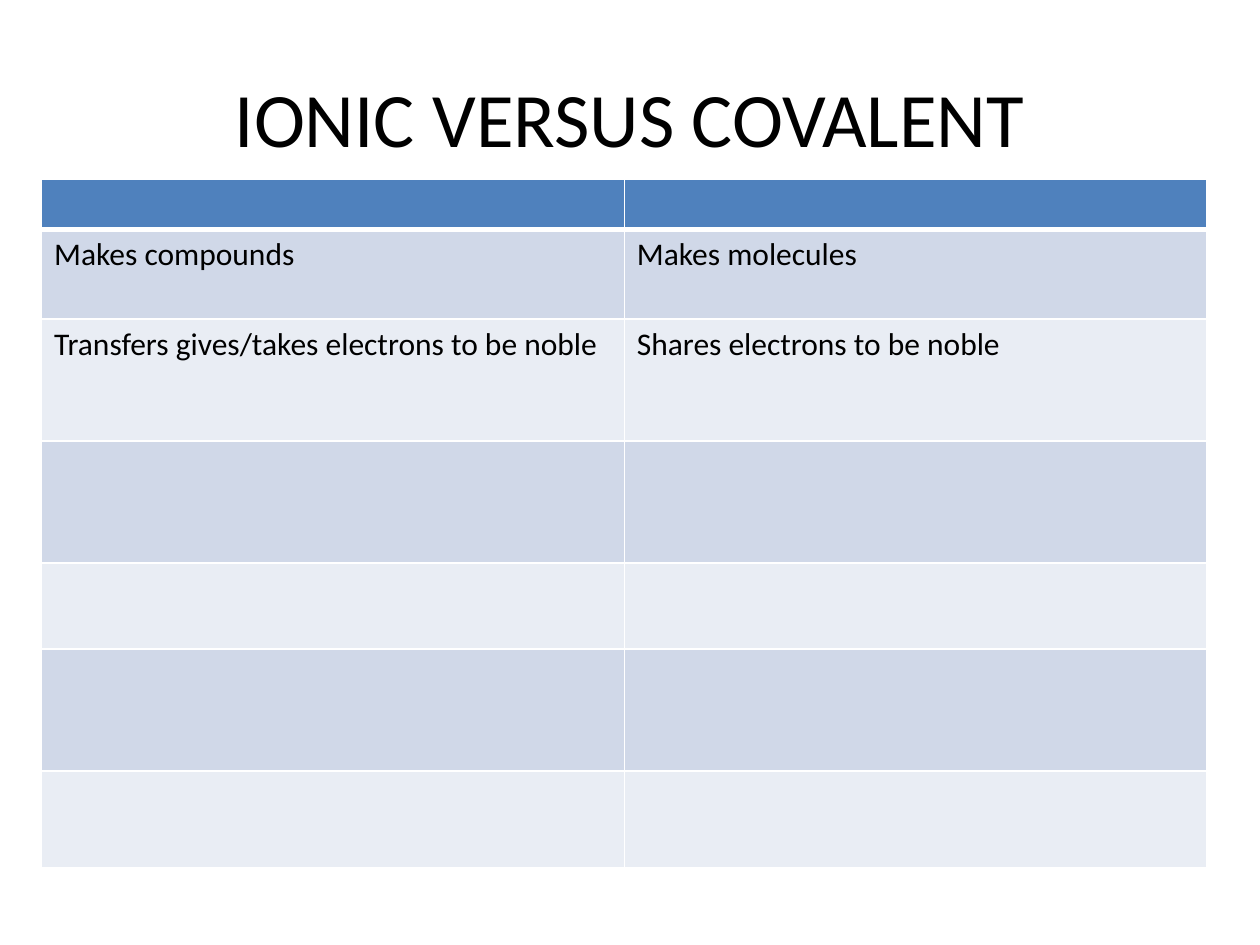
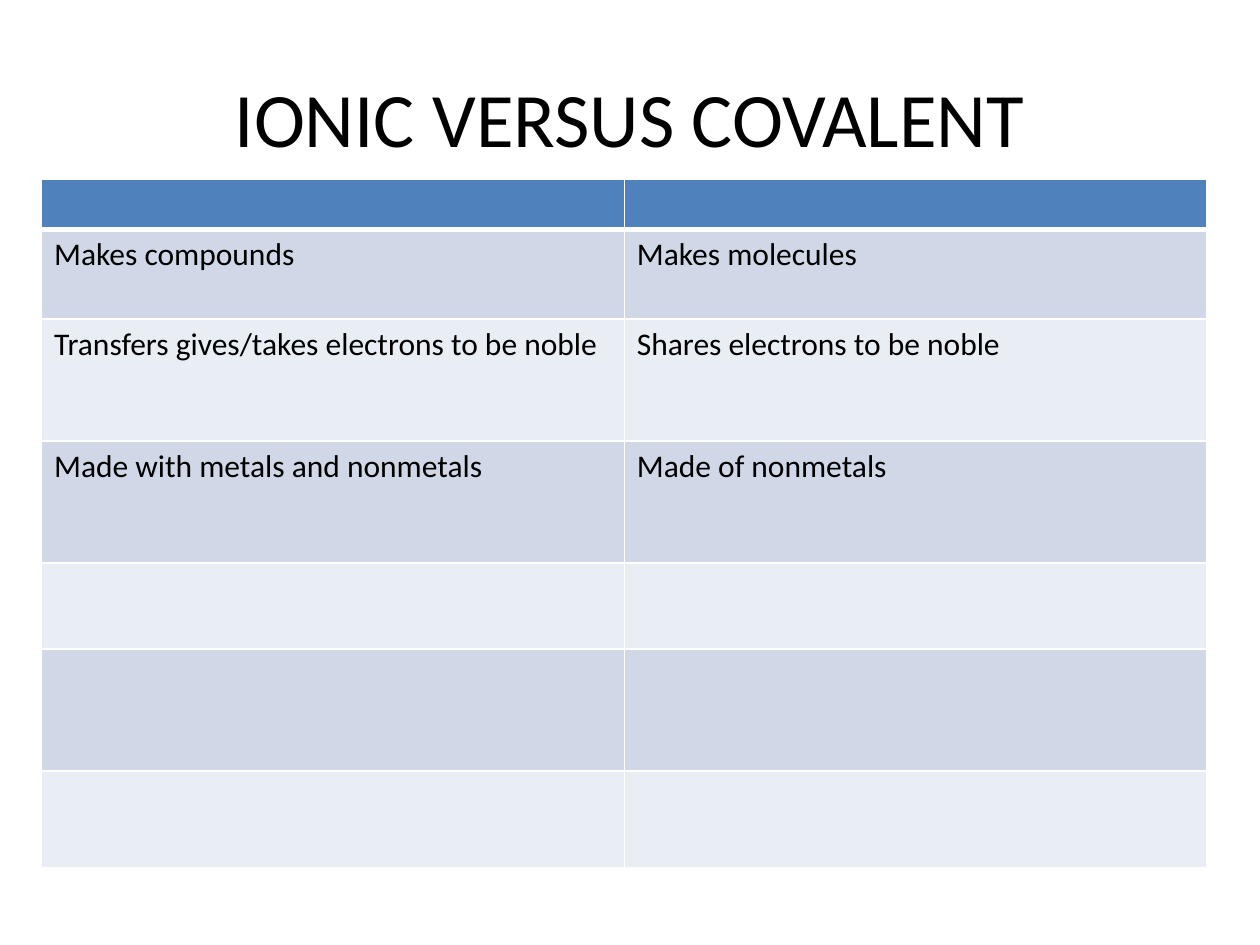
from dataclasses import dataclass
from lxml.etree import SubElement as Sub
from pptx import Presentation
from pptx.dml.color import RGBColor as RGB
from pptx.enum.text import MSO_ANCHOR as Anchor, PP_ALIGN as Align
from pptx.oxml.ns import qn
from pptx.util import Inches, Pt

# Content
TITLE = "IONIC VERSUS COVALENT"
FACTS = [
    ("Makes compounds", "Makes molecules"),
    ("Transfers gives/takes electrons to be noble", "Shares electrons to be noble"),
    ("Made with metals and nonmetals", "Made of nonmetals"),
]
SHOWN = [2, 3]  # facts revealed on each slide

# Layout in inches
WIDE, HIGH = 10, 7.5
HEAD = (0.05 * WIDE, 0.04 * HIGH, 0.9 * WIDE, HIGH / 6)
LEFT, TOP, SPAN, COLS = 0.33, 1.42, 9.25, 2
ROWS = [0.39, 0.71, 0.97, 0.97, 0.68, 0.97, 0.77]


@dataclass(frozen=True)
class Theme:
    font: str = "Calibri"
    ink: str = "000000"
    rule: str = "FFFFFF"
    head: str = "4F81BD"
    bands: tuple = ("D0D8E8", "E9EDF4")
    title: int = 44
    body: int = 18
    thin: int = 1
    thick: int = 3


T = Theme()


def write(frame, text, size):
    run = frame.paragraphs[0].add_run()
    run.text = text
    run.font.name, run.font.size = T.font, Pt(size)
    run.font.color.rgb = RGB.from_string(T.ink)


def edge(cell, side, width):
    line = Sub(cell._tc.get_or_add_tcPr(), qn(f"a:ln{side}"), w=str(Pt(width)))
    fill = Sub(line, qn("a:solidFill"))
    Sub(fill, qn("a:srgbClr"), val=T.rule)


def style(cell, row):
    # The rule between header and body is the thick one
    heavy = {0: "B", 1: "T"}.get(row)
    for side in "LRTB":
        edge(cell, side, T.thick if side == heavy else T.thin)
    cell.fill.solid()
    tint = T.bands[(row - 1) % 2] if row else T.head
    cell.fill.fore_color.rgb = RGB.from_string(tint)


def add_title(slide):
    frame = slide.shapes.add_textbox(*map(Inches, HEAD)).text_frame
    frame.word_wrap = True
    frame.vertical_anchor = Anchor.MIDDLE
    frame.paragraphs[0].alignment = Align.CENTER
    write(frame, TITLE, T.title)


def add_grid(slide, facts):
    box = map(Inches, (LEFT, TOP, SPAN, sum(ROWS)))
    table = slide.shapes.add_table(len(ROWS), COLS, *box).table
    for col in table.columns:
        col.width = Inches(SPAN / COLS)
    for r, high in enumerate(ROWS):
        table.rows[r].height = Inches(high)
        for c in range(COLS):
            style(table.cell(r, c), r)
    # Facts start below the empty header
    for r, pair in enumerate(facts, 1):
        for c, text in enumerate(pair):
            write(table.cell(r, c).text_frame, text, T.body)


def main():
    deck = Presentation()
    deck.slide_width, deck.slide_height = Inches(WIDE), Inches(HIGH)
    for count in SHOWN:
        slide = deck.slides.add_slide(deck.slide_layouts[6])
        add_title(slide)
        add_grid(slide, FACTS[:count])
    deck.save("out.pptx")


if __name__ == "__main__":
    main()
